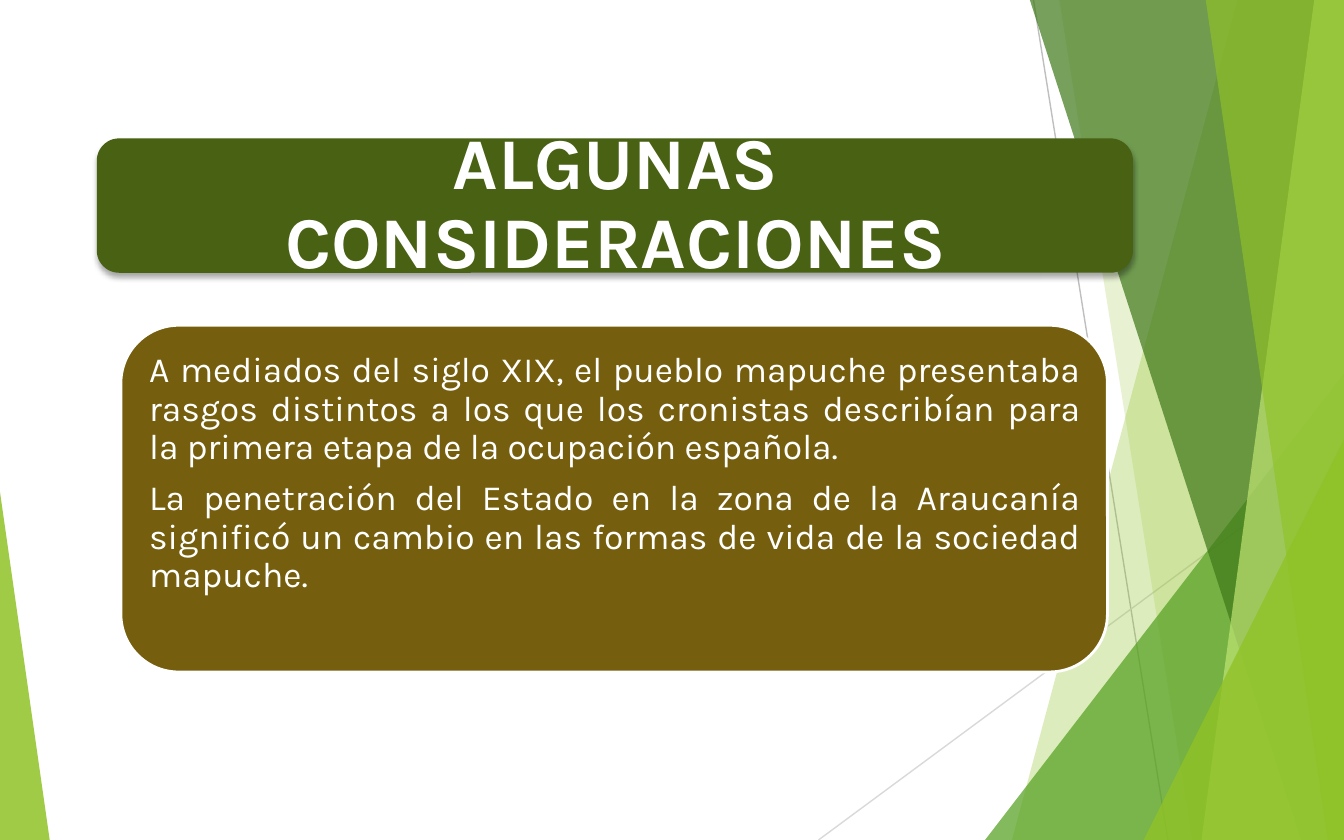
from lxml import etree
from pptx import Presentation
from pptx.dml.color import RGBColor
from pptx.enum.shapes import MSO_CONNECTOR, MSO_SHAPE
from pptx.enum.text import MSO_ANCHOR, PP_ALIGN
from pptx.oxml import parse_xml
from pptx.oxml.ns import nsdecls, qn
from pptx.util import Inches, Pt

WIDTH, HEIGHT = 10, 6.25
TOP = -0.01
LIME, WHITE = "90C226", "FFFFFF"


def rgb(value):
    return RGBColor.from_string(value)


def apply_format(target, values):
    for name, value in values.items():
        setattr(target, name, value)


def paint(shape, color, opacity=100, outline=None):
    shape.shadow.inherit = False
    shape.fill.solid()
    shape.fill.fore_color.rgb = rgb(color)
    if opacity < 100:
        tint = shape.fill._xPr.find(qn("a:solidFill"))[0]
        etree.SubElement(tint, qn("a:alpha")).set("val", str(opacity * 1000))
    if outline:
        shape.line.color.rgb = rgb(outline)
        shape.line.width = Pt(1.5)
    else:
        shape.line.fill.background()


def add_hairline(slide, start, end, color):
    ends = [Inches(value) for value in (*start, *end)]
    hairline = slide.shapes.add_connector(MSO_CONNECTOR.STRAIGHT, *ends)
    hairline.line.color.rgb = rgb(color)
    hairline.line.width = Pt(0.75)
    etree.SubElement(hairline._element.spPr, qn("a:effectLst"))


def add_panel(slide, top_x, bottom_x, color, opacity):
    """Full-height panel with a slanted left side, reaching the right edge."""
    builder = slide.shapes.build_freeform(
        Inches(top_x), Inches(TOP), scale=1.0)
    corners = [(WIDTH, TOP), (WIDTH, HEIGHT), (bottom_x, HEIGHT)]
    builder.add_line_segments(
        [(Inches(x), Inches(y)) for x, y in corners], close=True)
    paint(builder.convert_to_shape(), color, opacity)


def add_wedge(slide, left, top, width, apex, color, opacity):
    """Triangle standing on the bottom edge; apex 0 is left, 1 is right."""
    wedge = slide.shapes.add_shape(
        MSO_SHAPE.ISOSCELES_TRIANGLE, Inches(left), Inches(top),
        Inches(width), Inches(HEIGHT - top))
    wedge.adjustments[0] = apex
    paint(wedge, color, opacity)


def add_card(slide, box, color, outline=None):
    card = slide.shapes.add_shape(
        MSO_SHAPE.ROUNDED_RECTANGLE, *[Inches(value) for value in box])
    paint(card, color, outline=outline)
    return card


def add_soft_shadow(card):
    effects = card._element.spPr.find(qn("a:effectLst"))
    effects.append(parse_xml(
        f'<a:outerShdw {nsdecls("a")} blurRad="{Pt(3)}" dist="{Pt(2)}" '
        'dir="5400000" rotWithShape="0"><a:srgbClr val="000000">'
        '<a:alpha val="35000"/></a:srgbClr></a:outerShdw>'))


def add_text(slide, box, paragraphs, inset, anchor, align, size, bold=False):
    frame = slide.shapes.add_textbox(
        *[Inches(value) for value in box]).text_frame
    margins = {f"margin_{side}": Inches(inset)
               for side in ("left", "top", "right", "bottom")}
    apply_format(frame, {
        "word_wrap": True, "vertical_anchor": anchor, **margins})
    for index, wording in enumerate(paragraphs):
        paragraph = frame.add_paragraph() if index else frame.paragraphs[0]
        apply_format(paragraph, {
            "alignment": align, "line_spacing": 0.9,
            "space_after": Pt(round(size * 0.35))})
        run = paragraph.add_run()
        run.text = wording
        apply_format(run.font, {
            "name": "Karla", "size": Pt(size), "bold": bold})
        run.font.color.rgb = rgb(WHITE)


def add_backdrop(slide):
    add_hairline(slide, (7.69, 0), (8.69, HEIGHT), "BFBFBF")
    add_hairline(slide, (WIDTH, 3.36), (6.09, HEIGHT), "D9D9D9")
    add_panel(slide, 9.21, 7.53, LIME, 30)
    add_panel(slide, 7.88, 8.87, LIME, 20)
    add_wedge(slide, 7.33, 2.78, 2.67, 1, "54A021", 72)
    add_panel(slide, 7.66, 9.68, "3F7819", 70)
    add_panel(slide, 9.78, 8.94, "C0E474", 70)
    add_panel(slide, 8.97, 9.88, LIME, 65)
    add_wedge(slide, 8.51, 3.27, 1.49, 1, LIME, 80)
    add_wedge(slide, 0, 3.66, 0.37, 0, LIME, 85)


def main():
    deck = Presentation()
    deck.slide_width, deck.slide_height = Inches(WIDTH), Inches(HEIGHT)
    slide = deck.slides.add_slide(deck.slide_layouts[6])

    # Green facets behind the content
    add_backdrop(slide)

    # Title banner
    banner = add_card(slide, (0.72, 1.03, 7.71, 1), "486113")
    add_soft_shadow(banner)
    add_text(slide, (0.77, 1.08, 7.62, 0.9), ["ALGUNAS CONSIDERACIONES"],
             0.16, MSO_ANCHOR.MIDDLE, PP_ALIGN.CENTER, 39, bold=True)

    # Body card
    add_card(slide, (0.9, 2.42, 7.34, 2.58), "755E0D", outline=WHITE)
    considerations = [
        "A mediados del siglo XIX, el pueblo mapuche presentaba rasgos "
        "distintos a los que los cronistas describían para la primera etapa "
        "de la ocupación española.",
        "La penetración del Estado en la zona de la Araucanía significó un "
        "cambio en las formas de vida de la sociedad mapuche.",
    ]
    add_text(slide, (1.03, 2.54, 7.09, 2.33), considerations,
             0.08, MSO_ANCHOR.TOP, PP_ALIGN.JUSTIFY, 19)

    deck.save("out.pptx")


if __name__ == "__main__":
    main()
